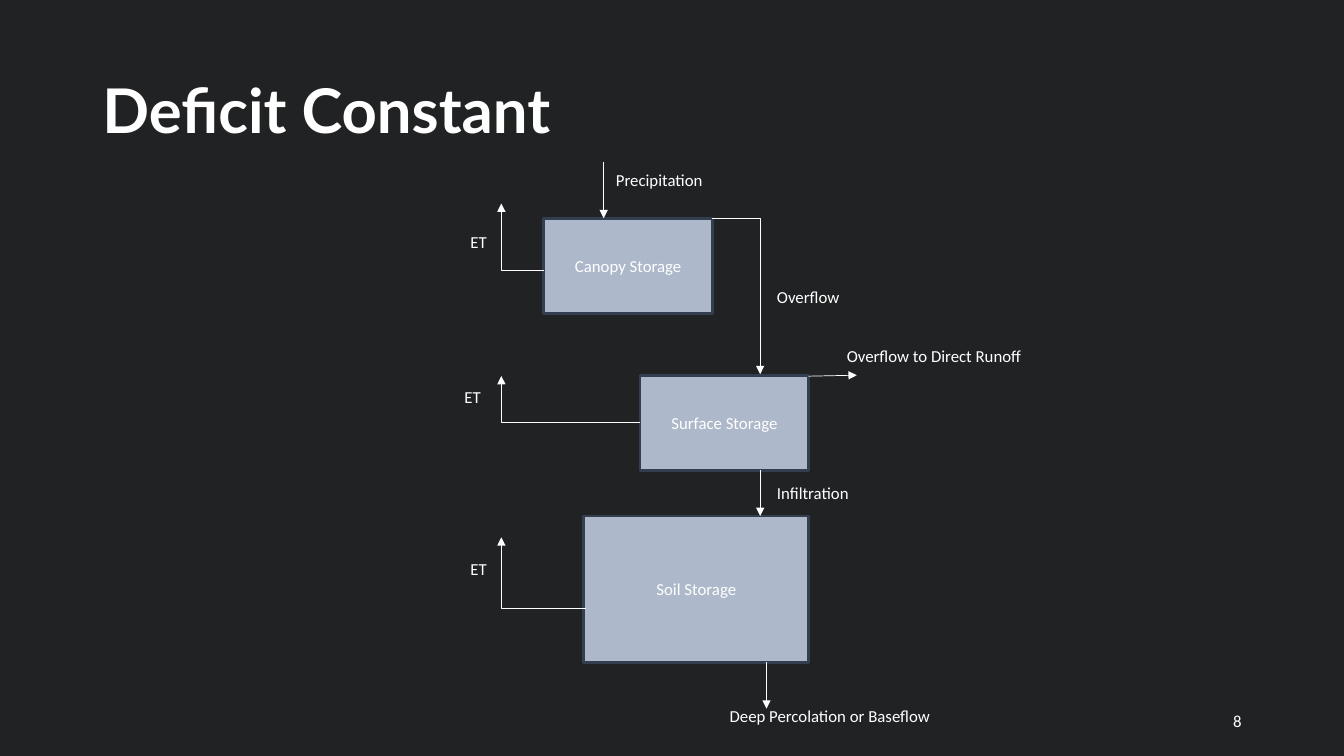
"""Build the Deficit Constant slide: a storage flow diagram on a dark background."""
from lxml.etree import SubElement
from pptx import Presentation
from pptx.dml.color import RGBColor
from pptx.enum.shapes import MSO_CONNECTOR, MSO_SHAPE
from pptx.enum.text import MSO_ANCHOR, PP_ALIGN
from pptx.oxml.ns import qn
from pptx.util import Pt

BACKGROUND = RGBColor(0x20, 0x22, 0x23)
WHITE = RGBColor(0xFF, 0xFF, 0xFF)
STORAGE_FILL = RGBColor(0xAD, 0xB9, 0xCA)
STORAGE_EDGE = RGBColor(0x33, 0x3F, 0x50)

STORAGES = [
    ("Canopy Storage", 388.4, 155.9, 120.6, 68),
    ("Surface Storage", 457.2, 268.2, 120.6, 68),
    ("Soil Storage", 417, 368.6, 160.8, 104.6),
]
LABELS = [
    ("Precipitation", 432.9, 117.6, 83),
    ("Overflow", 547.9, 201.3, 64),
    ("Overflow to Direct Runoff", 597.8, 243.4, 160.6),
    ("Infiltration", 547.9, 341.2, 76),
    ("Deep Percolation or Baseflow", 514.1, 500.1, 160.6),
    ("ET", 329, 161.5, 31),
    ("ET", 324.7, 272.5, 31),
    ("ET", 329, 395.7, 31),
]
STRAIGHT_FLOWS = [
    (431.2, 115.9, 431.2, 155.9),
    (543, 335.7, 543, 368.6),
    (577.7, 268.7, 612, 268),
    (547.5, 473.2, 547.5, 506.2),
]
BENT_FLOWS = [
    (508.8, 155.8, 543, 267.3),
    (388.4, 193.1, 358.1, 145.4),
    (457.2, 301.7, 358.1, 268.6),
    (418.3, 434.4, 358.1, 383.8),
]


def write(frame, text, size, align=PP_ALIGN.LEFT, font="Calibri", bold=False):
    """Put one white paragraph into a text frame."""
    frame.word_wrap = True
    frame.text = text
    paragraph = frame.paragraphs[0]
    paragraph.alignment = align
    paragraph.font.name = font
    paragraph.font.size = Pt(size)
    paragraph.font.bold = bold
    paragraph.font.color.rgb = WHITE
    return paragraph


def add_title(slide, text):
    """Move and format the title placeholder."""
    title = slide.shapes.title
    title.left, title.top, title.width, title.height = Pt(66), Pt(28.8), Pt(828), Pt(104.4)
    title.text_frame.vertical_anchor = MSO_ANCHOR.MIDDLE
    write(title.text_frame, text, 44, font="Lato", bold=True).line_spacing = 0.9


def add_label(slide, text, left, top, width, height=21.8, align=PP_ALIGN.LEFT):
    """Add a small text label."""
    label = slide.shapes.add_textbox(Pt(left), Pt(top), Pt(width), Pt(height))
    label.text_frame.vertical_anchor = MSO_ANCHOR.MIDDLE
    write(label.text_frame, text, 12, align)


def add_storage(slide, name, left, top, width, height):
    """Add a storage box with its name in the middle."""
    storage = slide.shapes.add_shape(
        MSO_SHAPE.RECTANGLE, Pt(left), Pt(top), Pt(width), Pt(height))
    storage.shadow.inherit = False
    storage.fill.solid()
    storage.fill.fore_color.rgb = STORAGE_FILL
    storage.line.color.rgb = STORAGE_EDGE
    storage.line.width = Pt(2)
    storage.text_frame.vertical_anchor = MSO_ANCHOR.MIDDLE
    write(storage.text_frame, name, 12, PP_ALIGN.CENTER)


def add_flow(slide, ends, bent=False):
    """Add an arrow; a bent one runs sideways first, then up or down."""
    kind = MSO_CONNECTOR.ELBOW if bent else MSO_CONNECTOR.STRAIGHT
    flow = slide.shapes.add_connector(kind, *map(Pt, ends))
    flow.line.color.rgb = WHITE
    flow.line.width = Pt(0.5)
    SubElement(flow.line._get_or_add_ln(), qn("a:tailEnd"), type="triangle")
    properties = flow._element.spPr
    SubElement(properties, qn("a:effectLst"))
    if bent:
        adjustments = properties.find(qn("a:prstGeom")).find(qn("a:avLst"))
        SubElement(adjustments, qn("a:gd"), name="adj1", fmla="val 99900")


def main():
    """Build and save the slide."""
    deck = Presentation()
    deck.slide_width, deck.slide_height = Pt(960), Pt(540)
    slide = deck.slides.add_slide(deck.slide_layouts[5])
    slide.background.fill.solid()
    slide.background.fill.fore_color.rgb = BACKGROUND

    add_title(slide, "Deficit Constant")
    for storage in STORAGES:
        add_storage(slide, *storage)
    for ends in STRAIGHT_FLOWS:
        add_flow(slide, ends)
    for ends in BENT_FLOWS:
        add_flow(slide, ends, bent=True)
    for label in LABELS:
        add_label(slide, *label)
    add_label(slide, "8", 678, 500.5, 216, 28.8, PP_ALIGN.RIGHT)
    deck.save("out.pptx")


if __name__ == "__main__":
    main()
